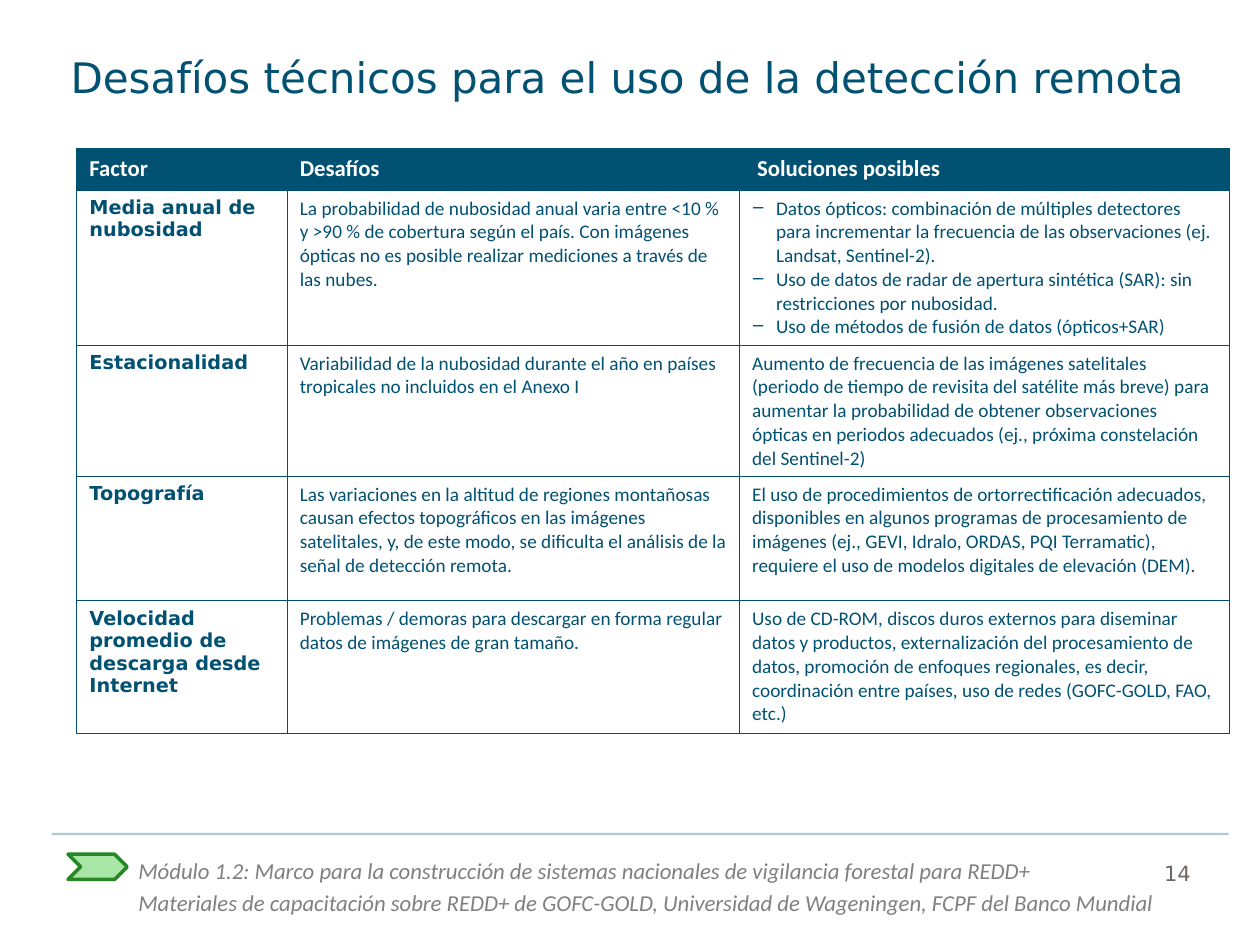
"""Build the slide on technical challenges of remote sensing."""
import pptx
import pptx.dml.color
import pptx.enum.shapes
import pptx.oxml
import pptx.oxml.ns
import pptx.util
from lxml import etree

Inches, Pt = pptx.util.Inches, pptx.util.Pt
qn = pptx.oxml.ns.qn
BLUE, EDGE, WHITE = "005172", "004F6F", "FFFFFF"
SANS, BODY = "DejaVu Sans", "Calibri"

TITLE = "Desafíos técnicos para el uso de la detección remota"
FOOT = [
    "Módulo 1.2: Marco para la construcción de sistemas nacionales de vigilancia forestal para REDD+",
    "Materiales de capacitación sobre REDD+ de GOFC-GOLD, Universidad de Wageningen, FCPF del Banco Mundial",
]
HEADS = ["Factor", "Desafíos", "Soluciones posibles"]
ROWS = [
    ("Media anual de nubosidad",
     "La probabilidad de nubosidad anual varia entre <10 % y >90 % de cobertura según el país. "
     "Con imágenes ópticas no es posible realizar mediciones a través de las nubes.",
     ["Datos ópticos: combinación de múltiples detectores para incrementar la frecuencia "
      "de las observaciones (ej. Landsat, Sentinel-2).",
      "Uso de datos de radar de apertura sintética (SAR): sin restricciones por nubosidad.",
      "Uso de métodos de fusión de datos (ópticos+SAR)"]),
    ("Estacionalidad",
     "Variabilidad de la nubosidad durante el año en países tropicales no incluidos en el Anexo I",
     "Aumento de frecuencia de las imágenes satelitales (periodo de tiempo de revisita del "
     "satélite más breve) para aumentar la probabilidad de obtener observaciones ópticas en "
     "periodos adecuados (ej., próxima constelación del Sentinel-2)"),
    ("Topografía",
     "Las variaciones en la altitud de regiones montañosas causan efectos topográficos en las "
     "imágenes satelitales, y, de este modo, se dificulta el análisis de la señal de detección remota.",
     "El uso de procedimientos de ortorrectificación adecuados, disponibles en algunos programas "
     "de procesamiento de imágenes (ej., GEVI, Idralo, ORDAS, PQI Terramatic), requiere el uso de "
     "modelos digitales de elevación (DEM)."),
    ("Velocidad promedio de descarga desde Internet",
     "Problemas / demoras para descargar en forma regular datos de imágenes de gran tamaño.",
     "Uso de CD-ROM, discos duros externos para diseminar datos y productos, externalización del "
     "procesamiento de datos, promoción de enfoques regionales, es decir, coordinación entre "
     "países, uso de redes (GOFC-GOLD, FAO, etc.)"),
]
WIDTHS = [1.67, 3.59, 3.89]
HEIGHTS = [0.33, 1.23, 1.04, 0.99, 1.05]


def rgb(code):
    return pptx.dml.color.RGBColor.from_string(code)


def write(frame, text, size=11, font=BODY, color=BLUE, bold=False, italic=False, lead=None, dash=False):
    frame.word_wrap = True
    for i, line in enumerate([text] if isinstance(text, str) else text):
        par = frame.add_paragraph() if i else frame.paragraphs[0]
        if dash:
            props = par._p.get_or_add_pPr()
            props.set("marL", str(Inches(0.19)))
            props.set("indent", str(-Inches(0.19)))
            etree.SubElement(props, qn("a:buChar")).set("char", "‒")
        if lead:
            par.line_spacing = Pt(lead)
        run = par.add_run()
        run.text = line
        run.font.size, run.font.name = Pt(size), font
        run.font.bold, run.font.italic = bold, italic
        run.font.color.rgb = rgb(color)


def label(slide, box, text, **style):
    frame = slide.shapes.add_textbox(*map(Inches, box)).text_frame
    write(frame, text, **style)
    return frame


def border(cell):
    props = cell._tc.get_or_add_tcPr()
    for i, side in enumerate("LRTB"):
        props.insert(i, pptx.oxml.parse_xml(
            f'<a:ln{side} xmlns:a="http://schemas.openxmlformats.org/drawingml/2006/main" '
            f'w="{Pt(0.75)}"><a:solidFill><a:srgbClr val="{EDGE}"/></a:solidFill></a:ln{side}>'))


def grid(slide):
    box = map(Inches, (0.61, 1.18, sum(WIDTHS), sum(HEIGHTS)))
    table = slide.shapes.add_table(len(HEIGHTS), len(WIDTHS), *box).table
    table.first_row = table.horz_banding = False
    for col, width in zip(table.columns, WIDTHS):
        col.width = Inches(width)
    for row, height in zip(table.rows, HEIGHTS):
        row.height = Inches(height)
    for r, texts in enumerate([HEADS] + ROWS):
        for c, text in enumerate(texts):
            cell = table.cell(r, c)
            if r == 0:
                cell.fill.solid()
                cell.fill.fore_color.rgb = rgb(BLUE)
                cell.margin_left = Inches(0.14 if c == 2 else 0.1)
                write(cell.text_frame, text, size=13, color=WHITE, bold=True)
            else:
                cell.fill.background()
                write(cell.text_frame, text, font=BODY if c else SANS, bold=c == 0,
                      dash=isinstance(text, list))
            border(cell)


def footer(slide):
    label(slide, (1, 6.72, 8.64, 0.61), FOOT, size=13, color="808080", italic=True, lead=18)
    label(slide, (9.14, 6.73, 0.61, 0.33), "14", size=12, font=SANS, color="706762", lead=18)
    kind = pptx.enum.shapes.MSO_SHAPE.CHEVRON
    mark = slide.shapes.add_shape(kind, *map(Inches, (0.54, 6.78, 0.47, 0.2)))
    mark.shadow.inherit = False
    mark.fill.solid()
    mark.fill.fore_color.rgb = rgb("A8E6A8")
    mark.line.color.rgb = rgb("278626")
    mark.line.width = Pt(2)
    straight = pptx.enum.shapes.MSO_CONNECTOR.STRAIGHT
    rule = slide.shapes.add_connector(straight, *map(Inches, (0.41, 6.62, 9.75, 6.62)))
    rule.line.color.rgb = rgb(BLUE)
    rule.line.width = Pt(1.25)
    props = rule._element.spPr
    tint = props.find(".//" + qn("a:srgbClr"))
    etree.SubElement(tint, qn("a:alpha")).set("val", "30000")
    etree.SubElement(props, qn("a:effectLst"))


def main():
    deck = pptx.Presentation()
    deck.slide_width, deck.slide_height = Inches(10), Inches(7.5)
    slide = deck.slides.add_slide(deck.slide_layouts[6])
    footer(slide)
    head = label(slide, (0.54, 0.25, 9.23, 0.77), TITLE, size=24, font=SANS, lead=40)
    head.margin_left, head.margin_top = Inches(0.02), 0
    grid(slide)
    deck.save("out.pptx")


if __name__ == "__main__":
    main()
